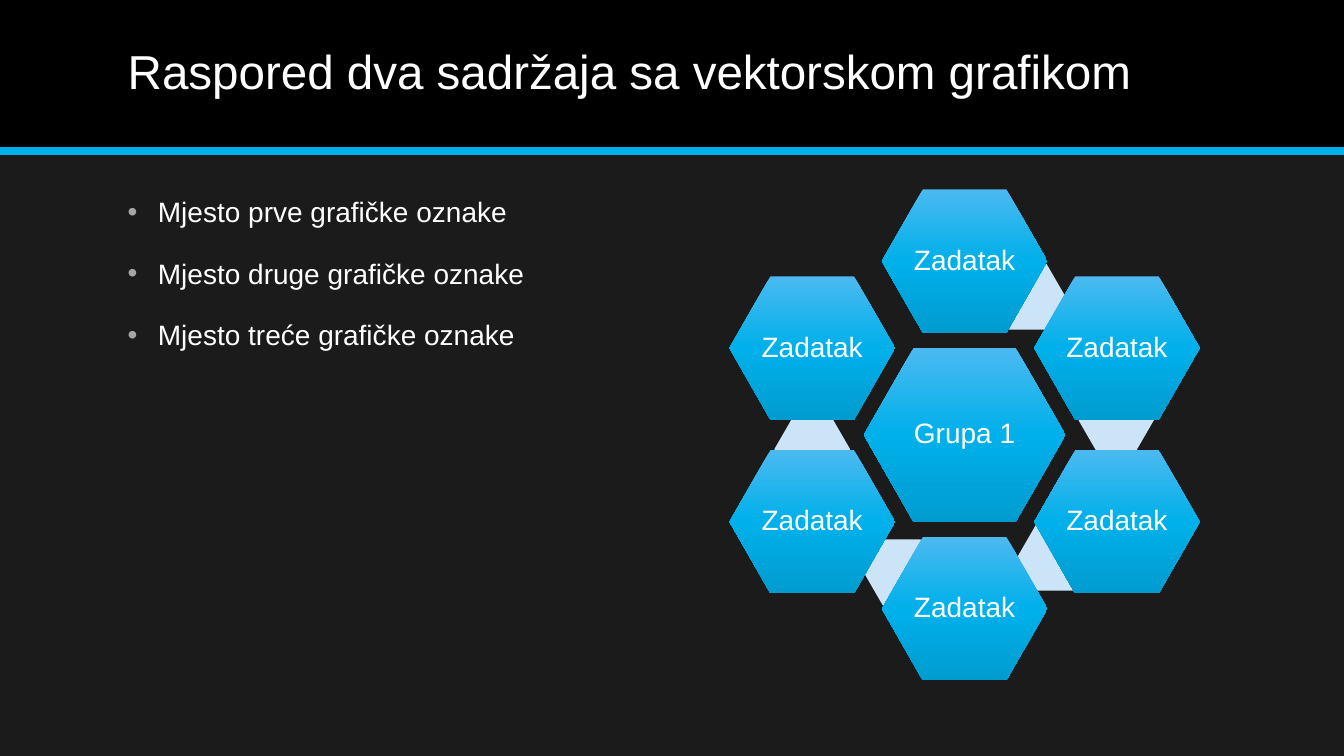
from copy import deepcopy
from dataclasses import dataclass

from lxml.etree import SubElement
from pptx import Presentation
from pptx.dml.color import RGBColor as RGB
from pptx.enum.shapes import MSO_CONNECTOR as Connector, MSO_SHAPE as Shape
from pptx.enum.text import MSO_ANCHOR as Anchor, PP_ALIGN as Align
from pptx.oxml.ns import qn
from pptx.util import Cm, Pt

SLIDE_W, SLIDE_H = 33.87, 19.05
HEADER_H = 3.81
TEXT_LEFT = 2.97
CENTER_X, CENTER_Y = 24.31, 10.96
COLUMN_STEP, ROW_STEP = 3.84, 2.19
GROUP_SIZE = (5.08, 4.39)
TASK_SIZE = (4.17, 3.61)
LINK_SIZE = (1.91, 1.65)

# Clockwise from the top, in column and row steps from the centre
TASK_STEPS = [(0, -2), (1, -1), (1, 1), (0, 2), (-1, 1), (-1, -1)]
# Centres of the pale links, in cm from the centre
LINK_OFFSETS = [(1.59, -3.48), (3.82, -0.38), (2.27, 3.1),
                (-1.59, 3.46), (-3.84, 0.36)]
BULLETS = ["Mjesto prve grafičke oznake",
           "Mjesto druge grafičke oznake",
           "Mjesto treće grafičke oznake"]


@dataclass
class Theme:
    font: str = "Arial"
    title_size: int = 34
    body_size: int = 20
    background: str = "1B1B1B"
    header: str = "000000"
    accent: str = "00B0EA"
    text: str = "FFFFFF"
    bullet: str = "A6A6A6"
    link: str = "CCE4F7"
    gradient: tuple = ((0, "4BB9F0"), (0.5, "00B0EA"), (1, "009CD0"))


class SlideBuilder:
    def __init__(self, slide, theme):
        self.slide = slide
        self.shapes = slide.shapes
        self.theme = theme
        fill = slide.background.fill
        fill.solid()
        fill.fore_color.rgb = RGB.from_string(theme.background)

    def style_text(self, paragraph, size):
        for run in paragraph.runs:
            run.font.name = self.theme.font
            run.font.size = Pt(size)
            run.font.color.rgb = RGB.from_string(self.theme.text)

    def plain_shape(self, kind, left, top, width, height, color):
        shape = self.shapes.add_shape(kind, Cm(left), Cm(top), Cm(width), Cm(height))
        shape.shadow.inherit = False
        shape.fill.solid()
        shape.fill.fore_color.rgb = RGB.from_string(color)
        shape.line.fill.background()
        return shape

    def header(self):
        self.plain_shape(Shape.RECTANGLE, 0, 0, SLIDE_W, HEADER_H, self.theme.header)
        rule = self.shapes.add_connector(
            Connector.STRAIGHT, 0, Cm(HEADER_H), Cm(SLIDE_W), Cm(HEADER_H))
        rule.line.width = Pt(6)
        rule.line.color.rgb = RGB.from_string(self.theme.accent)
        SubElement(rule._element.spPr, qn("a:effectLst"))

    def text_frame(self, left, top, width, height):
        frame = self.shapes.add_textbox(
            Cm(left), Cm(top), Cm(width), Cm(height)).text_frame
        frame.word_wrap = True
        return frame

    def title(self, text):
        frame = self.text_frame(TEXT_LEFT, 0.34, 27.94, 3.05)
        frame.vertical_anchor = Anchor.MIDDLE
        frame.text = text
        paragraph = frame.paragraphs[0]
        paragraph.line_spacing = 0.9
        self.style_text(paragraph, self.theme.title_size)

    def bullet_list(self, items):
        frame = self.text_frame(TEXT_LEFT, 4.78, 13.21, 12.4)
        frame.text = "\n".join(items)
        for paragraph in frame.paragraphs:
            paragraph.space_before = Pt(20)
            self.style_text(paragraph, self.theme.body_size)
            props = paragraph._p.get_or_add_pPr()
            props.set("marL", str(Cm(0.76)))
            props.set("indent", str(Cm(-0.76)))
            color = SubElement(props, qn("a:buClr"))
            SubElement(color, qn("a:srgbClr"), val=self.theme.bullet)
            SubElement(props, qn("a:buFont"), typeface=self.theme.font)
            SubElement(props, qn("a:buChar"), char="•")

    def hexagon(self, dx, dy, size, slant):
        """Place a hexagon whose centre is dx, dy cm from the diagram's centre."""
        width, height = size
        shape = self.plain_shape(
            Shape.HEXAGON, CENTER_X + dx - width / 2, CENTER_Y + dy - height / 2,
            width, height, self.theme.link)
        shape.adjustments[0] = slant
        return shape

    def link(self, dx, dy):
        self.hexagon(dx, dy, LINK_SIZE, 0.289)

    def labelled_hexagon(self, dx, dy, size, label):
        shape = self.hexagon(dx, dy, size, 0.286)
        self.fill_gradient(shape.fill)
        frame = shape.text_frame
        frame.word_wrap = True
        frame.vertical_anchor = Anchor.MIDDLE
        frame.margin_left = frame.margin_right = Cm(0.08)
        frame.margin_top = frame.margin_bottom = Cm(0.08)
        frame.text = label
        paragraph = frame.paragraphs[0]
        paragraph.alignment = Align.CENTER
        paragraph.line_spacing = 0.9
        self.style_text(paragraph, self.theme.body_size)

    def fill_gradient(self, fill):
        """Apply the theme's three-stop gradient, running from top to bottom."""
        fill.gradient()
        fill.gradient_angle = 270
        first_stop = fill.gradient_stops[0]._gs
        first_stop.addnext(deepcopy(first_stop))
        for stop, (position, color) in zip(fill.gradient_stops, self.theme.gradient):
            stop.position = position
            stop.color.rgb = RGB.from_string(color)

    def hexagon_cluster(self, group, task):
        self.labelled_hexagon(0, 0, GROUP_SIZE, group)
        for offset in LINK_OFFSETS:
            self.link(*offset)
        for column, row in TASK_STEPS:
            self.labelled_hexagon(column * COLUMN_STEP, row * ROW_STEP, TASK_SIZE, task)


def main():
    deck = Presentation()
    deck.slide_width, deck.slide_height = Cm(SLIDE_W), Cm(SLIDE_H)
    builder = SlideBuilder(deck.slides.add_slide(deck.slide_layouts[6]), Theme())
    builder.header()
    builder.title("Raspored dva sadržaja sa vektorskom grafikom")
    builder.bullet_list(BULLETS)
    builder.hexagon_cluster("Grupa 1", "Zadatak")
    deck.save("out.pptx")


if __name__ == "__main__":
    main()
